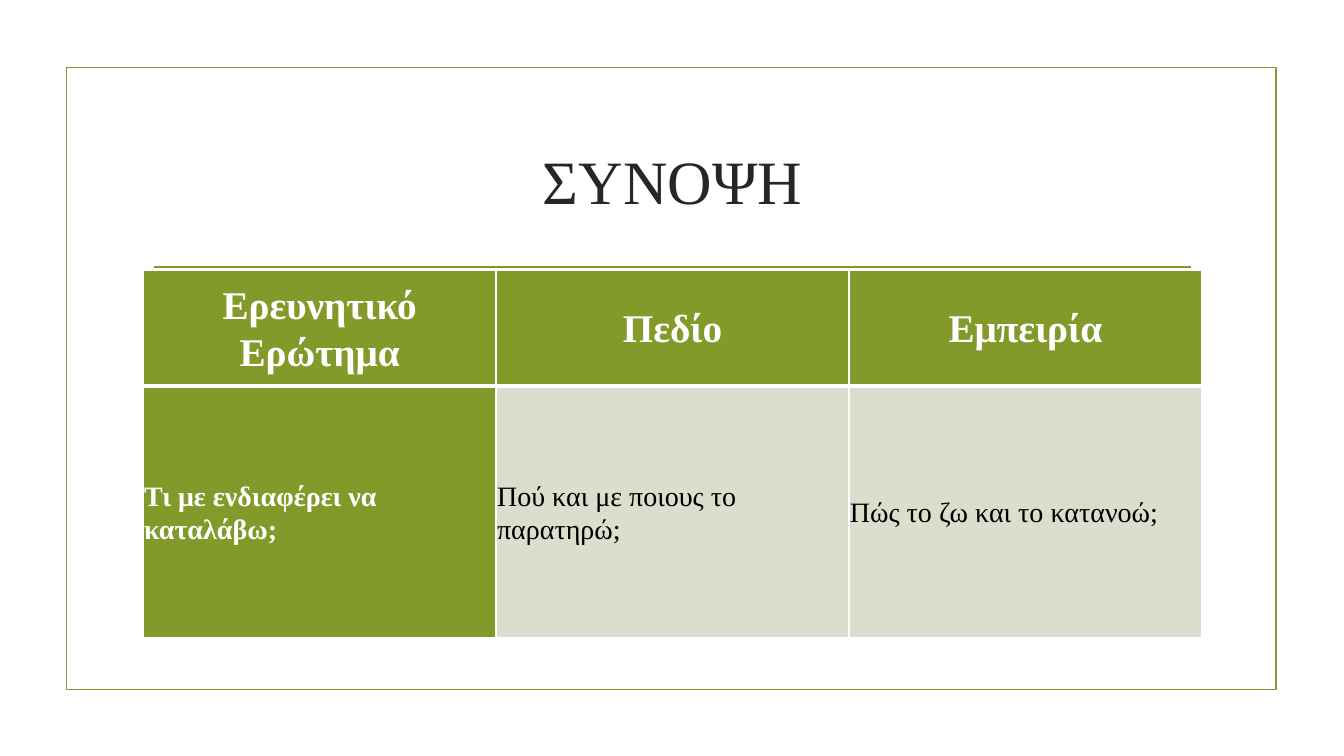
from lxml import etree
from pptx import Presentation
from pptx import util as u
from pptx.dml.color import RGBColor
from pptx.enum import shapes, text
from pptx.oxml import ns

COLORS = {"olive": "83992A", "pale": "D9DECD", "title": "262626", "white": "FFFFFF", "black": "000000"}
FONT = "Times New Roman"
HEADERS = ["Ερευνητικό Ερώτημα", "Πεδίο", "Εμπειρία"]
ANSWERS = ["Τι με ενδιαφέρει να καταλάβω;", "Πού και με ποιους το παρατηρώ;", "Πώς το ζω και το κατανοώ;"]


def color(name):
    return RGBColor.from_string(COLORS[name])


class SlideBuilder:
    def __init__(self, presentation):
        self.slide = presentation.slides.add_slide(presentation.slide_layouts[5])

    def add_words(self, paragraph, words, size, ink, bold=False, centred=True):
        paragraph.alignment = text.PP_ALIGN.CENTER if centred else text.PP_ALIGN.LEFT
        run = paragraph.add_run()
        run.text = words
        run.font.name = FONT
        run.font.size = u.Pt(size)
        run.font.bold = bold
        run.font.color.rgb = color(ink)

    def outline(self, line):
        line.color.rgb = color("olive")
        line.width = u.Pt(1.25)

    def frame(self, left, top, width, height):
        shape = self.slide.shapes.add_shape(
            shapes.MSO_SHAPE.RECTANGLE, *map(u.Inches, (left, top, width, height)))
        shape.shadow.inherit = False
        shape.fill.background()
        self.outline(shape.line)

    def rule(self, left, right, y):
        connector = self.slide.shapes.add_connector(
            shapes.MSO_CONNECTOR.STRAIGHT, *map(u.Inches, (left, y, right, y)))
        self.outline(connector.line)
        etree.SubElement(connector._element.spPr, ns.qn("a:effectLst"))

    def title(self, words, left, top, width, height):
        shape = self.slide.shapes.title
        shape.left, shape.top, shape.width, shape.height = map(u.Inches, (left, top, width, height))
        frame = shape.text_frame
        frame.word_wrap = True
        frame.vertical_anchor = text.MSO_ANCHOR.MIDDLE
        self.add_words(frame.paragraphs[0], words, 44, "title")

    def borders(self, cell, widths):
        properties = cell._tc.get_or_add_tcPr()
        for index, (side, width) in enumerate(widths.items()):
            line = etree.Element(ns.qn(f"a:ln{side}"), w=str(u.Pt(width)))
            fill = etree.SubElement(line, ns.qn("a:solidFill"))
            etree.SubElement(fill, ns.qn("a:srgbClr"), val=COLORS["white"])
            properties.insert(index, line)

    def cell(self, cell, words, header, filled):
        cell.margin_left = cell.margin_right = cell.margin_top = cell.margin_bottom = u.Inches(0.01)
        cell.vertical_anchor = text.MSO_ANCHOR.MIDDLE
        cell.fill.solid()
        cell.fill.fore_color.rgb = color("olive" if filled else "pale")
        paragraph = cell.text_frame.paragraphs[0]
        paragraph.line_spacing = 1.07
        paragraph.space_after = u.Pt(8)
        self.add_words(paragraph, words, 28 if header else 20, "white" if filled else "black", filled, header)
        self.borders(cell, {"L": 1, "R": 1, "T": 1 if header else 3, "B": 3 if header else 1})

    def table(self, rows, heights, left, top, width):
        table = self.slide.shapes.add_table(
            len(rows), len(rows[0]), *map(u.Inches, (left, top, width, sum(heights)))).table
        for row, (words, height) in enumerate(zip(rows, heights)):
            table.rows[row].height = u.Inches(height)
            for column, entry in enumerate(words):
                self.cell(table.cell(row, column), entry, row == 0, row == 0 or column == 0)


def main():
    presentation = Presentation()
    presentation.slide_width = u.Inches(13.33)
    presentation.slide_height = u.Inches(7.5)
    builder = SlideBuilder(presentation)
    builder.frame(0.66, 0.67, 12, 6.17)
    builder.rule(1.53, 11.81, 2.65)
    builder.title("ΣΥΝΟΨΗ", 1.42, 1.07, 10.5, 1.43)
    builder.table([HEADERS, ANSWERS], [1.15, 2.5], 1.42, 2.68, 10.5)
    presentation.save("out.pptx")


if __name__ == "__main__":
    main()
